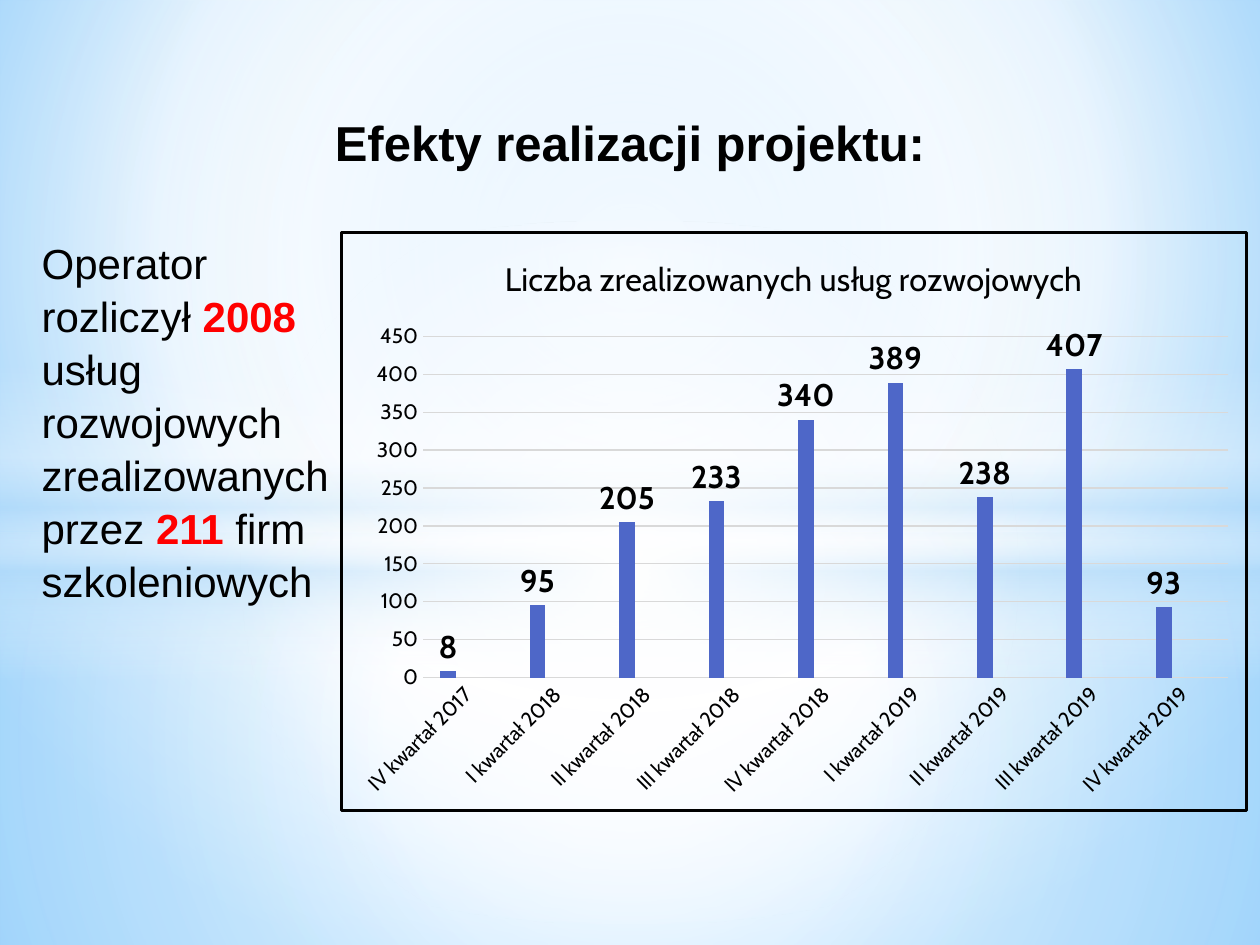
from typing import NamedTuple

from lxml import etree
from pptx import Presentation
from pptx.chart.data import CategoryChartData
from pptx.dml.color import RGBColor
from pptx.enum import chart as charts, shapes, text
from pptx.oxml import parse_xml
from pptx.oxml.ns import qn
from pptx.util import Pt

DRAWING = "http://schemas.openxmlformats.org/drawingml/2006/main"
CHART = "http://schemas.openxmlformats.org/drawingml/2006/chart"
BLACK, RED, GREY, WHITE, SKY = "000000", "FF0000", "D9D9D9", "FFFFFF", "B4DCFA"
CENTRE = (50, 50, 50, 50)


class Stop(NamedTuple):
    position: int
    colour: str
    opacity: int = 100


class Glow(NamedTuple):
    preset: shapes.MSO_SHAPE
    box: tuple[float, float, float, float]
    stops: list[Stop]
    focus: tuple[int, int, int, int] | None = CENTRE


class Series(NamedTuple):
    name: str
    values: list[int | None]
    colour: str


BACKGROUND = [Stop(0, "9ED5FF"), Stop(60, WHITE), Stop(100, "5BB9FF")]
RECTANGLE, OVAL = shapes.MSO_SHAPE.RECTANGLE, shapes.MSO_SHAPE.OVAL
GLOWS = [
    Glow(RECTANGLE, (0, 304.5, 720, 235.5),
         [Stop(0, WHITE, 91), Stop(37, WHITE, 76), Stop(100, SKY, 79)]),
    Glow(RECTANGLE, (0, 0, 720, 304.5),
         [Stop(0, WHITE, 89), Stop(48, WHITE, 62), Stop(100, SKY, 79)]),
    Glow(RECTANGLE, (0, 209, 720, 180),
         [Stop(0, WHITE, 0), Stop(29, WHITE, 30), Stop(45, SKY, 40),
          Stop(55, WHITE, 26), Stop(65, SKY, 60), Stop(100, WHITE, 0)], None),
    Glow(OVAL, (0, 126, 720, 402), [Stop(0, WHITE), Stop(54, WHITE, 0)]),
]
QUARTERS = ["IV kwartał 2017"] + [
    f"{quarter} kwartał {year}" for year in (2018, 2019) for quarter in ("I", "II", "III", "IV")
]
SERIES = [
    Series("Series 1", [8, 95, 205, 233, 340, 389, 238, 407, 93], "4E67C8"),
    Series("Series 2", [None] * len(QUARTERS), "5ECCF3"),
    Series("Series 3", [None] * len(QUARTERS), "A7EA52"),
]


def colour(value: str) -> RGBColor:
    return RGBColor.from_string(value)


def points(box) -> list[Pt]:
    return [Pt(length) for length in box]


def format_font(font, *, size: float, name: str = "Cabin", fill: str = BLACK,
                bold: bool = False) -> None:
    font.name, font.size, font.bold = name, Pt(size), bold
    font.color.rgb = colour(fill)


def set_gradient(fill, element, stops, focus) -> None:
    """Fill with a circular gradient around focus, or a vertical one without it."""
    fill.solid()
    stop_list = "".join(
        f'<a:gs pos="{stop.position * 1000}"><a:srgbClr val="{stop.colour}">'
        f'<a:alpha val="{stop.opacity * 1000}"/></a:srgbClr></a:gs>' for stop in stops)
    if focus:
        sides = " ".join(f'{side}="{value * 1000}"' for side, value in zip("ltrb", focus))
        direction = f'<a:path path="circle"><a:fillToRect {sides}/></a:path>'
    else:
        direction = '<a:lin ang="5400000" scaled="0"/>'
    solid = element.find(".//" + qn("a:solidFill"))
    solid.getparent().replace(solid, parse_xml(
        f'<a:gradFill xmlns:a="{DRAWING}" rotWithShape="1">'
        f"<a:gsLst>{stop_list}</a:gsLst>{direction}</a:gradFill>"))


def add_glow(slide, glow: Glow) -> None:
    shape = slide.shapes.add_shape(glow.preset, *points(glow.box))
    shape.shadow.inherit = False
    shape.line.fill.background()
    set_gradient(shape.fill, shape._element.spPr, glow.stops, glow.focus)


def add_text(slide, runs, box, *, size: float, align=text.PP_ALIGN.LEFT, bold: bool = False,
             margin_left: float = 7.2, line_spacing: float = 1.0, space_after: float = 0) -> None:
    """Add one paragraph; runs are (wording, highlighted) pairs."""
    frame = slide.shapes.add_textbox(*points(box)).text_frame
    frame.word_wrap = True
    frame.margin_left = Pt(margin_left)
    paragraph = frame.paragraphs[0]
    paragraph.alignment = align
    paragraph.line_spacing = line_spacing
    paragraph.space_after = Pt(space_after)
    for wording, highlighted in runs:
        run = paragraph.add_run()
        run.text = wording
        format_font(run.font, size=size, name="Arial", bold=bold or highlighted,
                    fill=RED if highlighted else BLACK)


def style_axes(chart) -> None:
    for axis in (chart.category_axis, chart.value_axis):
        axis.major_tick_mark = axis.minor_tick_mark = charts.XL_TICK_MARK.NONE
        format_font(axis.tick_labels.font, size=12)
    category, value = chart.category_axis, chart.value_axis
    value.minimum_scale, value.maximum_scale, value.major_unit = 0, 450, 50
    value.format.line.fill.background()
    for line in (category.format.line, value.major_gridlines.format.line):
        line.color.rgb = colour(GREY)
        line.width = Pt(0.75)
    category._element.find(qn("c:txPr")).find(qn("a:bodyPr")).set("rot", "-2700000")


def frame_chart(chart) -> None:
    """Give the chart area a black border and fix the inner plot area."""
    chart._chartSpace.find(qn("c:txPr")).addprevious(parse_xml(
        f'<c:spPr xmlns:c="{CHART}" xmlns:a="{DRAWING}"><a:noFill/>'
        f'<a:ln w="{Pt(1.5)}"><a:solidFill><a:srgbClr val="{BLACK}"/></a:solidFill></a:ln></c:spPr>'))
    plot_area = chart._chartSpace.chart.plotArea
    for old in plot_area.findall(qn("c:layout")):
        plot_area.remove(old)
    layout = etree.Element(qn("c:layout"))
    manual = etree.SubElement(layout, qn("c:manualLayout"))
    settings = {"layoutTarget": "inner", "xMode": "edge", "yMode": "edge",
                "x": 0.09, "y": 0.18, "w": 0.89, "h": 0.59}
    for tag, setting in settings.items():
        etree.SubElement(manual, qn(f"c:{tag}")).set("val", str(setting))
    plot_area.insert(0, layout)


def add_services_chart(slide, box) -> None:
    data = CategoryChartData()
    data.categories = QUARTERS
    for series in SERIES:
        data.add_series(series.name, series.values)
    chart = slide.shapes.add_chart(
        charts.XL_CHART_TYPE.COLUMN_CLUSTERED, *points(box), data).chart
    format_font(chart.font, size=10)
    chart.has_legend = False
    chart.has_title = True
    title = chart.chart_title.text_frame
    title.text = "Liczba zrealizowanych usług rozwojowych"
    format_font(title.paragraphs[0].runs[0].font, size=18.6)
    plot = chart.plots[0]
    plot.vary_by_categories = False
    plot.gap_width, plot.overlap = 219, -27
    for drawn, series in zip(plot.series, SERIES):
        drawn.format.fill.solid()
        drawn.format.fill.fore_color.rgb = colour(series.colour)
    labels = plot.series[0].data_labels
    labels.show_value = True
    labels.position = charts.XL_LABEL_POSITION.OUTSIDE_END
    format_font(labels.font, size=18, bold=True)
    style_axes(chart)
    frame_chart(chart)


def main() -> None:
    presentation = Presentation()
    presentation.slide_width, presentation.slide_height = Pt(720), Pt(540)
    slide = presentation.slides.add_slide(presentation.slide_layouts[6])
    set_gradient(slide.background.fill, slide._element.cSld.bg, BACKGROUND, (20, 10, 20, 60))
    for glow in GLOWS:
        add_glow(slide, glow)
    add_text(slide, [("Efekty realizacji projektu:", False)], (0, 60.5, 720, 41),
             size=28, bold=True, align=text.PP_ALIGN.CENTER)
    add_text(slide, [("Operator rozliczył ", False), ("2008 ", True),
                     ("usług rozwojowych zrealizowanych przez ", False), ("211 ", True),
                     ("firm szkoleniowych", False)], (13, 131, 184.5, 221),
             size=24, margin_left=10.8, line_spacing=1.05, space_after=3)
    add_services_chart(slide, (194.5, 132, 518.5, 332))
    presentation.save("out.pptx")


if __name__ == "__main__":
    main()
